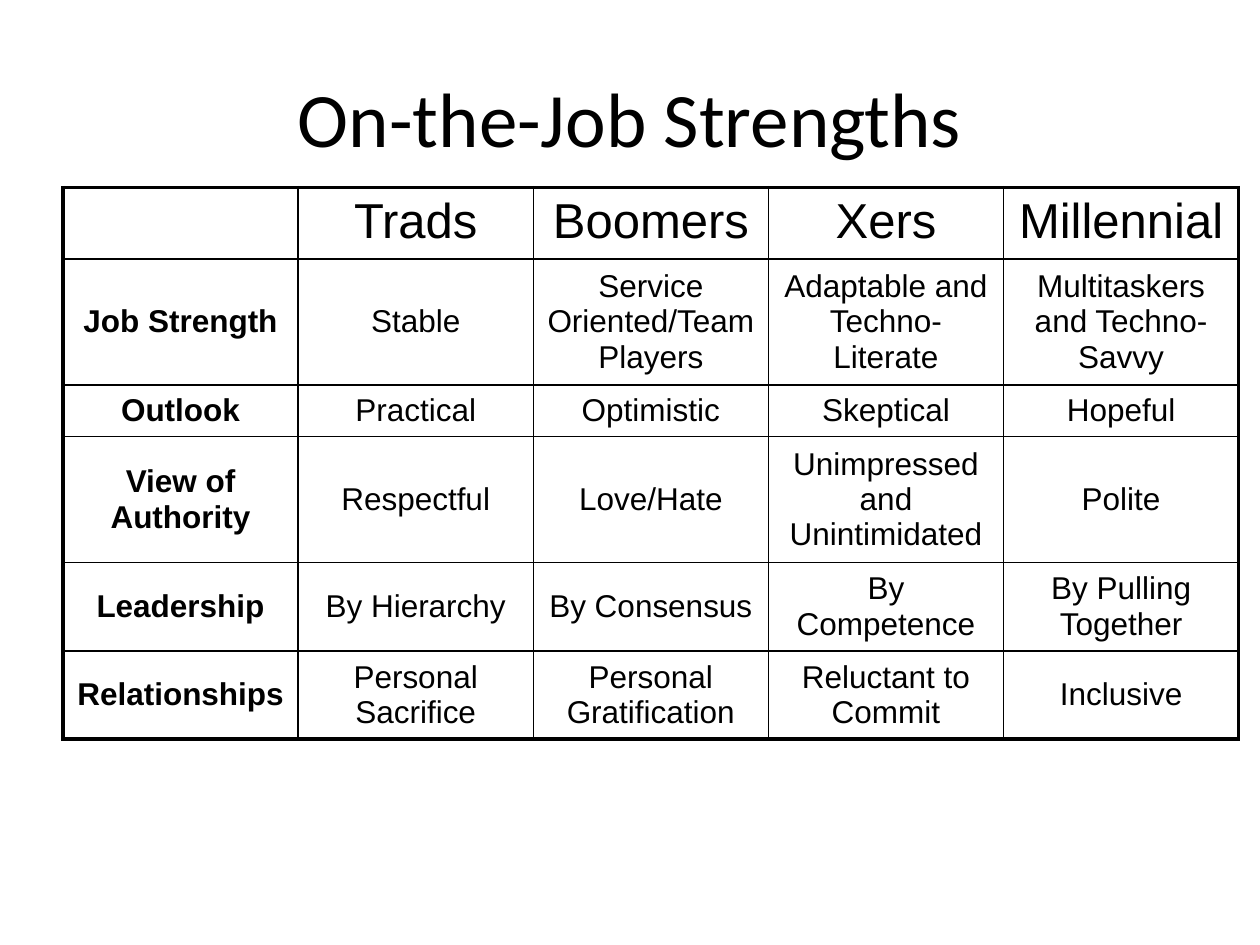
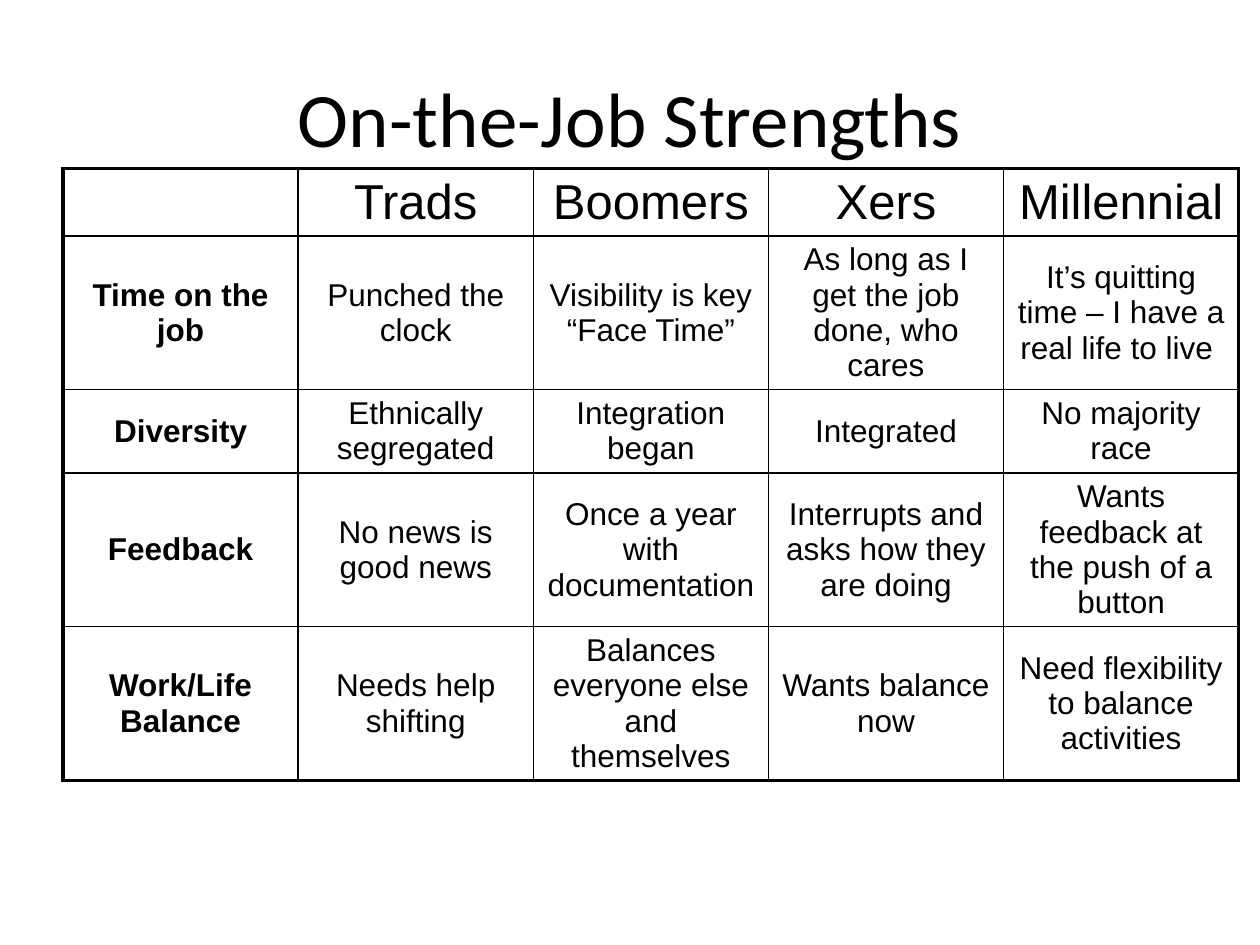
from dataclasses import dataclass
from typing import Any

from lxml.etree import SubElement
from pptx import Presentation
from pptx.dml.color import RGBColor
from pptx.enum.text import MSO_ANCHOR as Anchor, PP_ALIGN as Align
from pptx.oxml.ns import qn
from pptx.util import Cm, Length, Pt


@dataclass(frozen=True)
class Theme:
    ink: str = "000000"
    title_font: str = "Calibri"
    table_font: str = "Arial"
    title_size: float = 44
    header_size: float = 28
    body_size: float = 18
    inner_line: float = 1
    outer_line: float = 2.25


@dataclass(frozen=True)
class StrengthTable:
    top: Length
    row_heights: tuple[float, ...]
    rows: tuple[tuple[str, ...], ...]


THEME = Theme()
TITLE = "On-the-Job Strengths"
TITLE_BOX = {"left": Cm(1.27), "top": Cm(0.76), "width": Cm(22.86), "height": Cm(3.18)}
TABLE_LEFT = Cm(1.27)
COL_WIDTH = Cm(4.74)
GENERATIONS = ("", "Trads", "Boomers", "Xers", "Millennial")

TABLES = (
    StrengthTable(Cm(3.78), (1.44, 2.54, 1.04, 2.54, 1.78, 1.78), (
        ("Job Strength", "Stable", "Service Oriented/Team Players",
         "Adaptable and Techno-Literate", "Multitaskers and Techno-Savvy"),
        ("Outlook", "Practical", "Optimistic", "Skeptical", "Hopeful"),
        ("View of Authority", "Respectful", "Love/Hate",
         "Unimpressed and Unintimidated", "Polite"),
        ("Leadership", "By Hierarchy", "By Consensus", "By Competence",
         "By Pulling Together"),
        ("Relationships", "Personal Sacrifice", "Personal Gratification",
         "Reluctant to Commit", "Inclusive"),
    )),
    StrengthTable(Cm(3.4), (1.35, 3.1, 1.67, 3.1, 3.1), (
        ("Time on the job", "Punched the clock", "Visibility is key “Face Time”",
         "As long as I get the job done, who cares",
         "It’s quitting time – I have a real life to live "),
        ("Diversity", "Ethnically segregated", "Integration began", "Integrated",
         "No majority race"),
        ("Feedback", "No news is good news", "Once a year with documentation",
         "Interrupts and asks how they are doing",
         "Wants feedback at the push of a button"),
        ("Work/Life Balance", "Needs help shifting",
         "Balances everyone else and themselves", "Wants balance now",
         "Need flexibility to balance activities"),
    )),
)


def set_attrs(target: Any, values: dict[str, Any]) -> None:
    for name, value in values.items():
        setattr(target, name, value)


def write_text(tf: Any, text: str, font: str, size: float, bold: bool = False) -> None:
    p = tf.paragraphs[0]
    p.alignment = Align.CENTER
    if text:
        r = p.add_run()
        r.text = text
        set_attrs(r.font, {"name": font, "size": Pt(size), "bold": bold})
        r.font.color.rgb = RGBColor.from_string(THEME.ink)


def set_borders(cell: Any, outer_sides: dict[str, bool]) -> None:
    tc_pr = cell._tc.get_or_add_tcPr()
    for side, is_outer in outer_sides.items():
        width = THEME.outer_line if is_outer else THEME.inner_line
        ln = SubElement(tc_pr, qn(f"a:ln{side}"), w=str(int(Pt(width))))
        fill = SubElement(ln, qn("a:solidFill"))
        SubElement(fill, qn("a:srgbClr"), val=THEME.ink)


def add_title(s: Any) -> None:
    title = s.shapes.title
    set_attrs(title, TITLE_BOX)
    title.text_frame.vertical_anchor = Anchor.MIDDLE
    write_text(title.text_frame, TITLE, THEME.title_font, THEME.title_size)


def add_strength_table(s: Any, spec: StrengthTable) -> None:
    rows = (GENERATIONS, *spec.rows)
    last_row, last_col = len(rows) - 1, len(GENERATIONS) - 1
    frame = s.shapes.add_table(
        len(rows), len(GENERATIONS), TABLE_LEFT, spec.top,
        COL_WIDTH * len(GENERATIONS), Cm(sum(spec.row_heights)))
    table = frame.table
    set_attrs(table, {"first_row": False, "horz_banding": False})
    for column in table.columns:
        column.width = COL_WIDTH
    for i, (texts, height) in enumerate(zip(rows, spec.row_heights)):
        table.rows[i].height = Cm(height)
        for j, text in enumerate(texts):
            cell = table.cell(i, j)
            size = THEME.body_size if i else THEME.header_size
            cell.vertical_anchor = Anchor.MIDDLE if i else Anchor.TOP
            write_text(cell.text_frame, text, THEME.table_font, size, j == 0)
            set_borders(cell, {"L": j == 0, "R": j == last_col,
                               "T": i == 0, "B": i == last_row})
            cell.fill.background()


def main() -> None:
    prs = Presentation()
    set_attrs(prs, {"slide_width": Cm(25.4), "slide_height": Cm(19.05)})
    for spec in TABLES:
        s = prs.slides.add_slide(prs.slide_layouts[5])
        add_title(s)
        add_strength_table(s, spec)
    prs.save("out.pptx")


if __name__ == "__main__":
    main()
